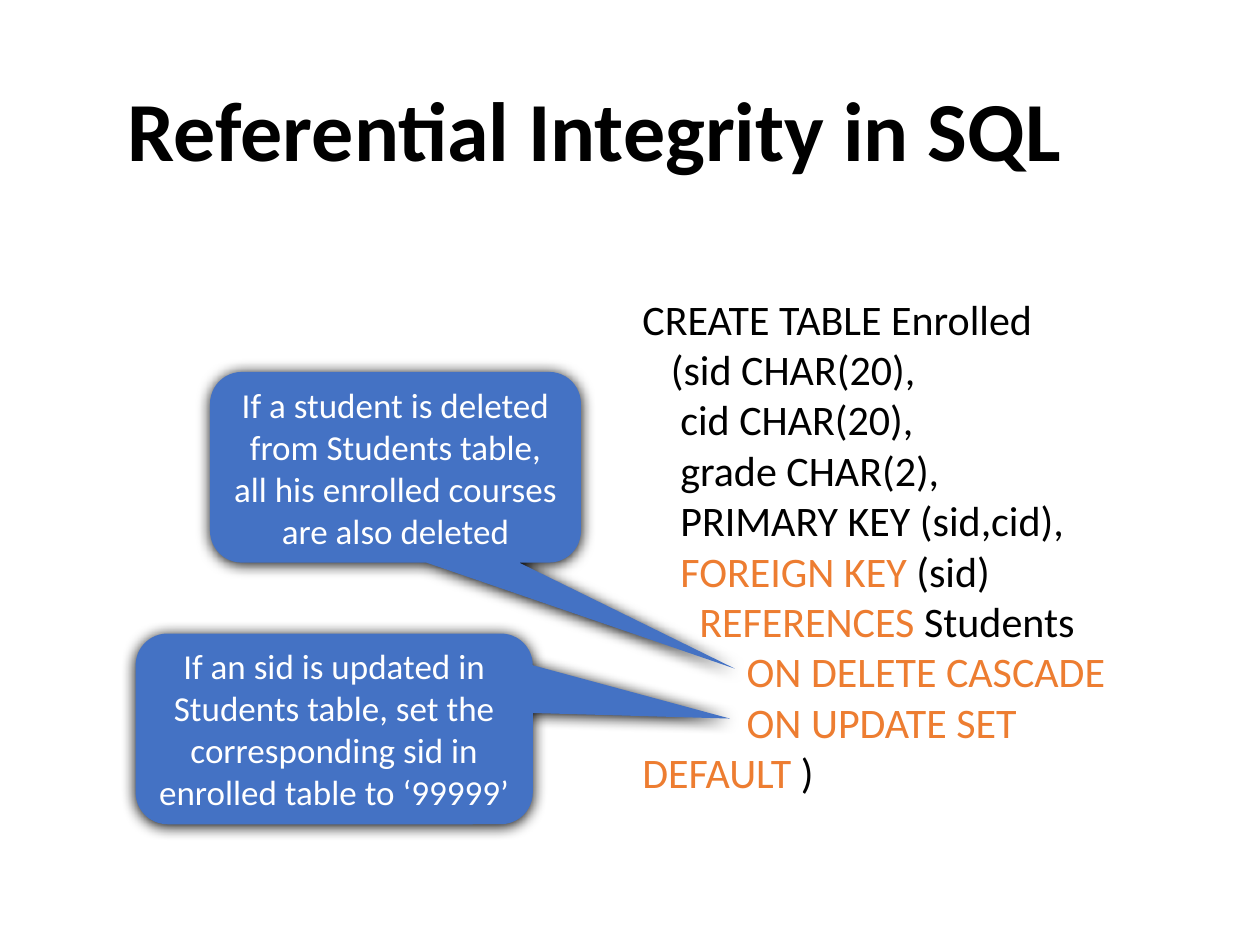
import pptx
import pptx.dml.color
import pptx.enum.shapes
import pptx.enum.text
import pptx.oxml
import pptx.oxml.ns
import pptx.util

Pt = pptx.util.Pt
COLORS = {"black": "000000", "orange": "ED7D31", "blue": "4472C4", "white": "FFFFFF"}
SPACE_WIDTH = 5.42  # one code space at 24 pt


def color(name):
    return pptx.dml.color.RGBColor.from_string(COLORS[name])


def add_span(para, text, size, color_name, bold=False):
    span = para.add_run()
    span.text = text
    span.font.name = "Calibri"
    span.font.size = Pt(size)
    span.font.bold = bold
    span.font.color.rgb = color(color_name)


deck = pptx.Presentation()
deck.slide_width, deck.slide_height = Pt(720), Pt(540)
page = deck.slides.add_slide(deck.slide_layouts[6])

# Title
title = page.shapes.add_textbox(Pt(66), Pt(33), Pt(612), Pt(87)).text_frame
title.word_wrap = True
title.vertical_anchor = pptx.enum.text.MSO_ANCHOR.MIDDLE
title.paragraphs[0].line_spacing = 0.9
add_span(title.paragraphs[0], "Referential Integrity in SQL", 48, "black", bold=True)

# SQL statement: indent in spaces, then the colored parts of each line
code_lines = [
    (0, [("CREATE TABLE Enrolled", "black")]),
    (3, [("(sid CHAR(20),", "black")]),
    (4, [("cid CHAR(20),", "black")]),
    (4, [("grade CHAR(2),", "black")]),
    (4, [("PRIMARY KEY (sid,cid),", "black")]),
    (4, [("FOREIGN KEY ", "orange"), ("(sid)", "black")]),
    (6, [("REFERENCES ", "orange"), ("Students", "black")]),
    (11, [("ON DELETE CASCADE", "orange")]),
    (11, [("ON UPDATE SET DEFAULT ", "orange"), (")", "black")]),
]
code = page.shapes.add_textbox(Pt(360), Pt(164), Pt(331), Pt(296)).text_frame
code.word_wrap = True
for number, (indent, parts) in enumerate(code_lines):
    para = code.add_paragraph() if number else code.paragraphs[0]
    properties = para._p.get_or_add_pPr()
    properties.set("marL", "0")
    properties.set("indent", str(int(Pt(indent * SPACE_WIDTH))))
    for text, color_name in parts:
        add_span(para, text, 24, color_name)

# Callouts: left, top, width, height, pointer tip, text
callouts = [
    (120, 212.5, 212, 109, (0.915, 1.056),
     "If a student is deleted from Students table, all his enrolled courses are also deleted"),
    (77.5, 362, 227, 109, (0.996, -0.054),
     "If an sid is updated in Students table, set the corresponding sid in "
     "enrolled table to ‘99999’"),
]
shadow_xml = (
    f'<a:effectLst {pptx.oxml.ns.nsdecls("a")}>'
    f'<a:outerShdw blurRad="{int(Pt(8.5))}" dist="{int(Pt(1))}" dir="5400000" rotWithShape="0">'
    f'<a:srgbClr val="{COLORS["black"]}"/></a:outerShdw></a:effectLst>'
)
for left, top, width, height, tip, text in callouts:
    callout = page.shapes.add_shape(
        pptx.enum.shapes.MSO_SHAPE.ROUNDED_RECTANGULAR_CALLOUT,
        Pt(left), Pt(top), Pt(width), Pt(height))
    callout.adjustments[0], callout.adjustments[1] = tip
    callout.adjustments[2] = 0.167
    callout.fill.solid()
    callout.fill.fore_color.rgb = color("blue")
    callout.line.fill.background()
    callout._element.spPr.append(pptx.oxml.parse_xml(shadow_xml))
    frame = callout.text_frame
    frame.word_wrap = True
    frame.vertical_anchor = pptx.enum.text.MSO_ANCHOR.MIDDLE
    frame.paragraphs[0].alignment = pptx.enum.text.PP_ALIGN.CENTER
    add_span(frame.paragraphs[0], text, 20, "white")

deck.save("out.pptx")
